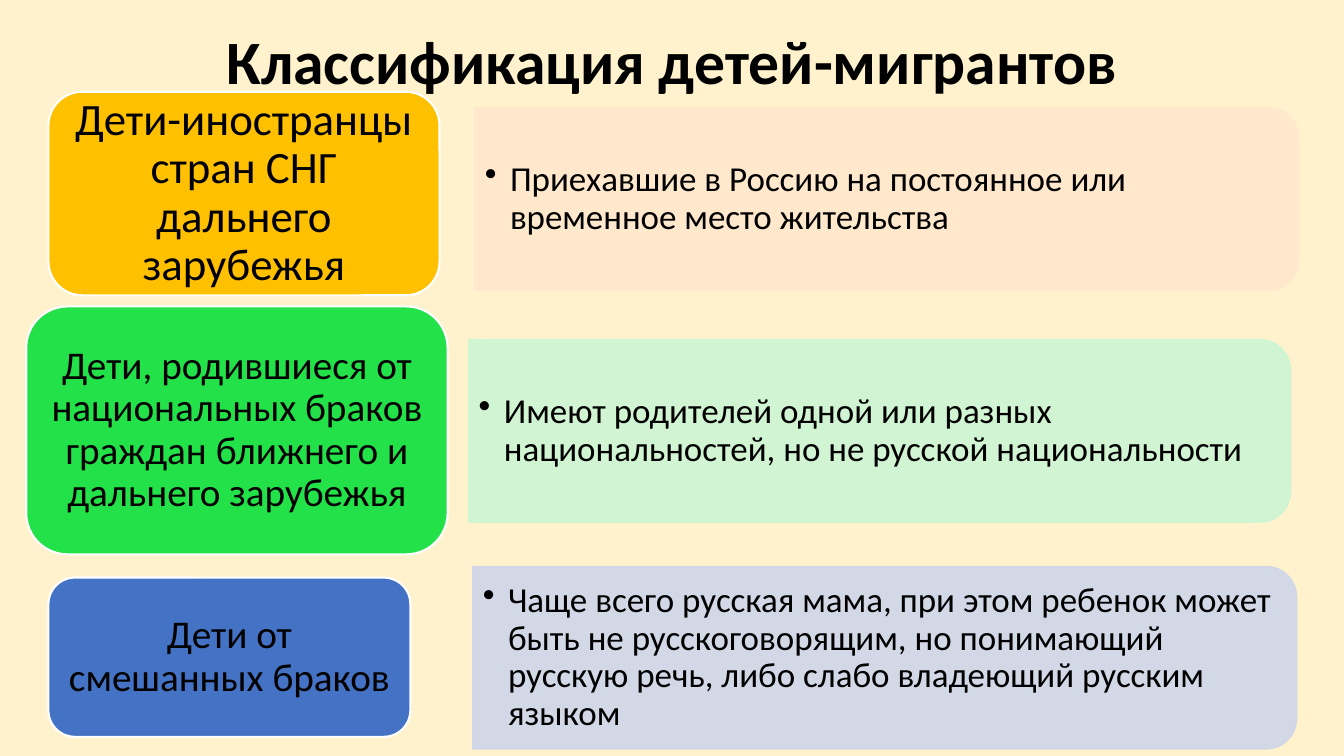
from dataclasses import dataclass

import pptx
import pptx.dml.color
import pptx.enum.shapes
import pptx.enum.text
import pptx.oxml.ns
import pptx.util
from lxml import etree

Inches = pptx.util.Inches
Pt = pptx.util.Pt
RGB = pptx.dml.color.RGBColor.from_string
MSO_SHAPE = pptx.enum.shapes.MSO_SHAPE
PP_ALIGN = pptx.enum.text.PP_ALIGN
qn = pptx.oxml.ns.qn


@dataclass
class Theme:
    font: str = "Calibri"
    background: str = "FFF2CC"
    text: str = "000000"
    outline: str = "FFFFFF"
    title_size: int = 44
    large_size: int = 32
    card_size: int = 28
    list_size: int = 25


theme = Theme()


def write_text(sp, text, size, align, margins, bold=False):
    tf = sp.text_frame
    tf.text = text
    tf.word_wrap = True
    tf.auto_size = pptx.enum.text.MSO_AUTO_SIZE.NONE
    tf.vertical_anchor = pptx.enum.text.MSO_ANCHOR.MIDDLE
    tf.margin_left = tf.margin_right = Inches(margins[0])
    tf.margin_top = tf.margin_bottom = Inches(margins[1])
    p = tf.paragraphs[0]
    p.alignment = align
    p.line_spacing = 0.9
    font = p.runs[0].font
    font.name = theme.font
    font.size = Pt(size)
    font.bold = bold
    font.color.rgb = RGB(theme.text)
    return p


def paint(sp, fill, line, width):
    sp.shadow.inherit = False
    sp.fill.solid()
    sp.fill.fore_color.rgb = RGB(fill)
    sp.line.color.rgb = RGB(line)
    sp.line.width = Pt(width)


prs = pptx.Presentation()
prs.slide_width = Inches(13.33)
prs.slide_height = Inches(7.5)
s = prs.slides.add_slide(prs.slide_layouts[5])
s.background.fill.solid()
s.background.fill.fore_color.rgb = RGB(theme.background)

title = s.shapes.title
title.left, title.top = Inches(0.92), Inches(-0.08)
title.width, title.height = Inches(11.5), Inches(1.45)
write_text(title, "Классификация детей-мигрантов", theme.title_size,
           PP_ALIGN.CENTER, (0.1, 0.05), bold=True)

rows = [
    dict(card=(0.48, 0.91, 3.88, 2.02), color="FFC000", size=theme.large_size,
         margins=(0.13, 0.07), name="Дети-иностранцы стран СНГ дальнего зарубежья",
         panel=(4.71, 1.07, 8.17), tint="FFE8CC",
         detail="Приехавшие в Россию на постоянное или временное место жительства"),
    dict(card=(0.26, 3.04, 4.18, 2.46), color="23E148", size=theme.card_size,
         margins=(0.07, 0.03),
         name="Дети, родившиеся от национальных браков граждан ближнего и дальнего зарубежья",
         panel=(4.65, 3.37, 8.15), tint="CCF6D3",
         detail="Имеют родителей одной или разных национальностей, "
                "но не русской национальности"),
    dict(card=(0.48, 5.73, 3.59, 1.58), color="4472C4", size=theme.card_size,
         margins=(0.12, 0.06), name="Дети от смешанных браков",
         panel=(4.69, 5.62, 8.17), tint="CFD6EA",
         detail="Чаще всего русская мама, при этом ребенок может быть не "
                "русскоговорящим, но понимающий русскую речь, либо слабо "
                "владеющий русским языком"),
]
panel_height = 1.81
text_inset = 0.09

for row in rows:
    left, top, width = row["panel"]
    shift = (width - panel_height) / 2
    panel = s.shapes.add_shape(
        MSO_SHAPE.ROUND_2_SAME_RECTANGLE, Inches(left + shift), Inches(top - shift),
        Inches(panel_height), Inches(width))
    panel.rotation = 90
    paint(panel, row["tint"], row["tint"], 1)
    for clr in panel._element.spPr.iter(qn("a:srgbClr")):
        etree.SubElement(clr, qn("a:alpha")).set("val", "90000")

    box = s.shapes.add_textbox(
        Inches(left), Inches(top + text_inset),
        Inches(width - text_inset), Inches(panel_height - 2 * text_inset))
    p = write_text(box, row["detail"], theme.list_size, PP_ALIGN.LEFT, (0.1, 0.05))
    pPr = p._p.get_or_add_pPr()
    pPr.set("marL", str(Inches(0.25)))
    pPr.set("indent", str(Inches(-0.25)))
    etree.SubElement(pPr, qn("a:buChar")).set("char", "•")

    card = s.shapes.add_shape(MSO_SHAPE.ROUNDED_RECTANGLE, *map(Inches, row["card"]))
    paint(card, row["color"], theme.outline, 1.5)
    write_text(card, row["name"], row["size"], PP_ALIGN.CENTER, row["margins"])

prs.save("out.pptx")
